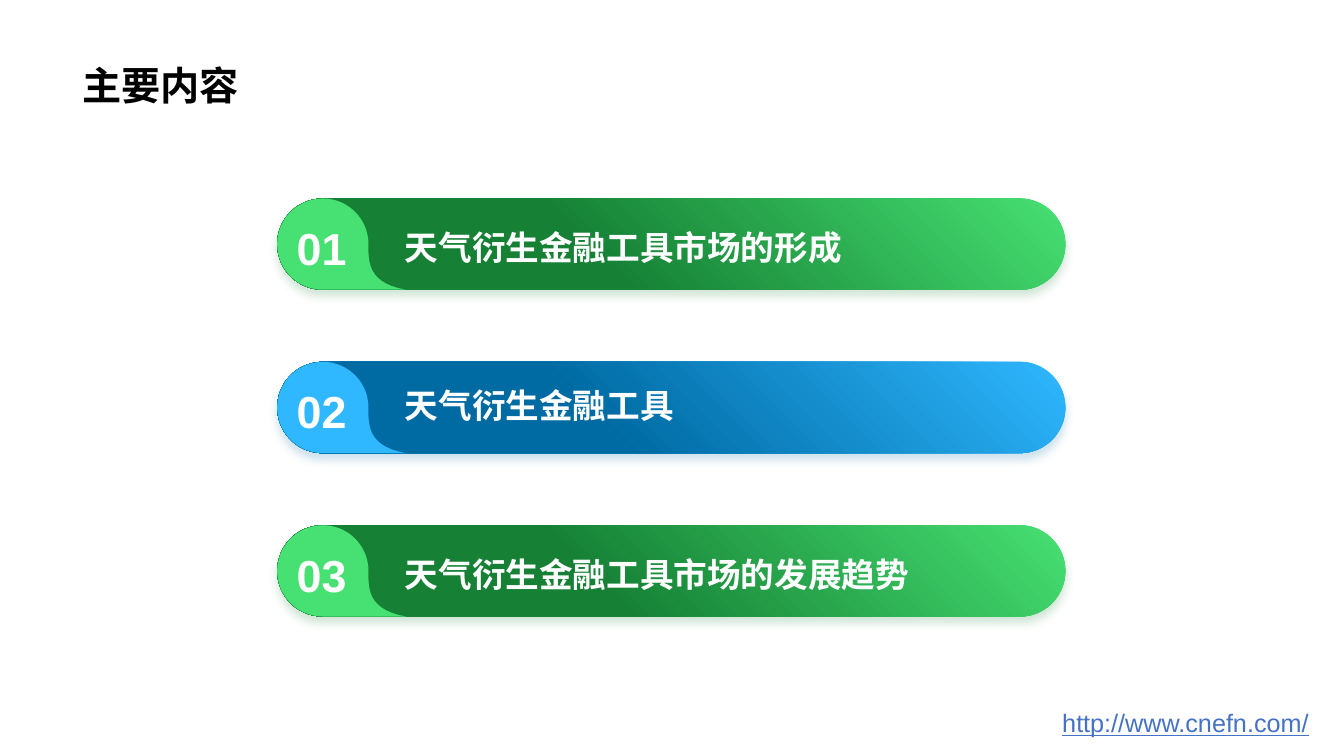
import math

import lxml.etree
import pptx
import pptx.dml.color
import pptx.enum.shapes
import pptx.enum.text
import pptx.oxml
import pptx.oxml.ns
import pptx.util

Pt = pptx.util.Pt
RGBColor = pptx.dml.color.RGBColor
ALIGN = pptx.enum.text.PP_ALIGN
ANCHOR = pptx.enum.text.MSO_ANCHOR

BLACK = RGBColor(0x00, 0x00, 0x00)
WHITE = RGBColor(0xFF, 0xFF, 0xFF)
LINK_BLUE = RGBColor(0x44, 0x72, 0xC4)
LIGHT_GREEN = RGBColor(0x47, 0xE0, 0x73)
DARK_GREEN = RGBColor(0x16, 0x81, 0x35)
LIGHT_BLUE = RGBColor(0x2F, 0xB7, 0xFF)
DARK_BLUE = RGBColor(0x00, 0x6B, 0xA3)

presentation = pptx.Presentation()
presentation.slide_width = Pt(960)
presentation.slide_height = Pt(540)
slide = presentation.slides.add_slide(presentation.slide_layouts[6])


def add_text(text, left, top, width, height, size, color, bold=True,
             underline=False, align=ALIGN.LEFT, anchor=ANCHOR.TOP, wrap=True):
    box = slide.shapes.add_textbox(Pt(left), Pt(top), Pt(width), Pt(height))
    frame = box.text_frame
    frame.word_wrap = wrap
    frame.vertical_anchor = anchor
    paragraph = frame.paragraphs[0]
    paragraph.alignment = align
    run = paragraph.add_run()
    run.text = text
    run.font.name = "Arial"
    run.font.size = Pt(size)
    run.font.bold = bold
    run.font.underline = underline
    run.font.color.rgb = color


def add_soft_shadow(shape, color):
    shape.shadow.inherit = False
    effects = shape.element.spPr.find(pptx.oxml.ns.qn("a:effectLst"))
    effects.append(pptx.oxml.parse_xml(
        f'<a:outerShdw {pptx.oxml.ns.nsdecls("a")} blurRad="{Pt(6)}" dist="{Pt(4)}" '
        f'dir="5400000" algn="t" rotWithShape="0"><a:srgbClr val="{color}">'
        '<a:alpha val="20000"/></a:srgbClr></a:outerShdw>'))


# Site address and title
add_text("http://www.cnefn.com/", 751.7, 501.8, 197, 29, 18, LINK_BLUE,
         bold=False, underline=True)
add_text("主要内容", 51.8, 0, 855.4, 80.6, 28, BLACK, anchor=ANCHOR.BOTTOM)

# Agenda bars: heading, heading offset, light and dark colour
agenda = [
    ("天气衍生金融工具市场的形成", 16.6, LIGHT_GREEN, DARK_GREEN),
    ("天气衍生金融工具", 13, LIGHT_BLUE, DARK_BLUE),
    ("天气衍生金融工具市场的发展趋势", 16.6, LIGHT_GREEN, DARK_GREEN),
]
BAR_LEFT, BAR_WIDTH, BAR_HEIGHT = 198, 563, 65.2
FIRST_TOP, PITCH = 141.8, 116.7
RADIUS = BAR_HEIGHT / 2

# Tab outline: round cap from bottom over the top to the right, then a flared foot
tab_outline = [(RADIUS + RADIUS * math.cos(math.radians(angle)),
                RADIUS + RADIUS * math.sin(math.radians(angle)))
               for angle in range(90, 361, 5)]
foot_curve = [(65.2, 36.4), (65.2, 49), (68, 61), (92, BAR_HEIGHT)]
for step in range(13):
    t = step / 12
    weights = [math.comb(3, k) * t ** k * (1 - t) ** (3 - k) for k in range(4)]
    tab_outline.append(tuple(sum(w * point[axis] for w, point in zip(weights, foot_curve))
                             for axis in (0, 1)))

for index, (heading, heading_offset, light, dark) in enumerate(agenda):
    top = FIRST_TOP + index * PITCH

    # Gradient bar
    bar = slide.shapes.add_shape(pptx.enum.shapes.MSO_SHAPE.ROUNDED_RECTANGLE,
                                 Pt(BAR_LEFT), Pt(top), Pt(BAR_WIDTH), Pt(BAR_HEIGHT))
    bar.adjustments[0] = 0.5
    bar.line.fill.background()
    bar.fill.gradient()
    bar.fill.gradient_angle = 225
    for stop, color, position in zip(bar.fill.gradient_stops, (light, dark), (0, 0.6)):
        stop.color.rgb = color
        stop.position = position
    add_soft_shadow(bar, dark)

    # Number tab
    corners = [(Pt(BAR_LEFT + x), Pt(top + y)) for x, y in tab_outline]
    builder = slide.shapes.build_freeform(*corners[0])
    builder.add_line_segments(corners[1:], close=True)
    tab = builder.convert_to_shape()
    tab.shadow.inherit = False
    tab.fill.solid()
    tab.fill.fore_color.rgb = light
    tab.line.fill.background()

    # Heading and number
    add_text(heading, 282.2, top + heading_offset, 415, 36, 24, WHITE)
    add_text(f"{index + 1:02d}", 204.5, top + 12.2, 50.4, 46, 32, WHITE,
             align=ALIGN.CENTER, wrap=False)

presentation.save("out.pptx")
